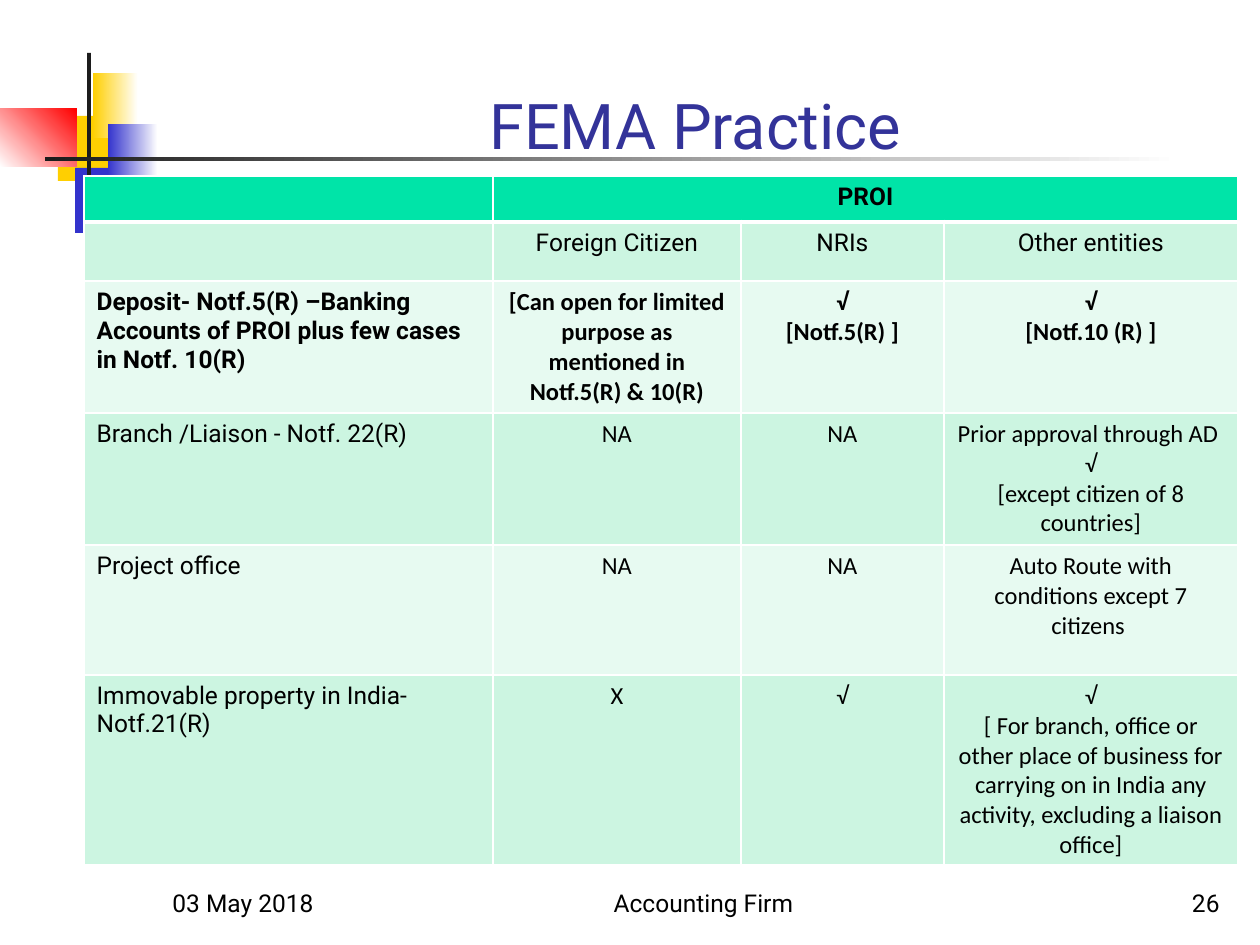
import pptx
import pptx.util
import pptx.dml.color
import pptx.enum.shapes
import pptx.enum.text
import pptx.oxml.ns
from lxml import etree

# Content
TITLE = "FEMA Practice"
HEADER = ["", "PROI"]
SUBHEADER = ["", "Foreign Citizen", "NRIs", "Other entities"]
BODY = [
    ["Deposit- Notf.5(R) –Banking Accounts of PROI plus few cases in Notf. 10(R)",
     "[Can open for limited purpose as mentioned in Notf.5(R) & 10(R)",
     "√\n[Notf.5(R) ]", "√\n[Notf.10 (R) ]"],
    ["Branch /Liaison - Notf. 22(R)", "NA", "NA",
     "Prior approval through AD \n√\n[except citizen of 8 countries]"],
    ["Project office", "NA", "NA", "Auto Route with\nconditions except 7 citizens "],
    ["Immovable property in India- Notf.21(R)", "X", "√",
     "√\n[ For branch, office or other place of business for carrying on in India "
     "any activity, excluding a liaison office]"],
]
BOLD_ROWS = (0, 2)

THEME = dict(
    title="333399", text="000000", white="FFFFFF", dark="1C1C1C",
    yellow="FFCF01", blue="3333CC", red="FF0000",
    header="00E4A8", band=("E7FAF1", "CCF5E1"),
    font="Roboto", cell_font="Calibri", title_size=36, size=14,
)

# Geometry in px, 126 to the inch
SCALE = 914400 // 126
TABLE_AT = (84, 176)
COLS = [409, 248, 203, 294]
ROWS = [46, 59, 132, 132, 130, 190]
FOOTER_Y, FOOTER_H = 861, 63
FOOTER = [("03 May 2018", 160, 262, "LEFT"),
          ("Accounting Firm", 504, 399, "CENTER"),
          ("26", 970, 262, "RIGHT")]
# Left, top, width, height, colours (two make a gradient), angle
ORNAMENT = [
    (58, 116, 60, 65, ["yellow"], 0),
    (75, 168, 58, 65, ["blue"], 0),
    (93, 73, 45, 65, ["yellow", "white"], 0),
    (108, 124, 50, 65, ["blue", "white"], 0),
    (0, 109, 77, 58, ["white", "red"], 45),
    (87, 53, 4, 145, ["dark"], 0),
    (45, 157, 1134, 4, ["dark", "white"], 0),
]


def px(n):
    return pptx.util.Emu(n * SCALE)


def rgb(value):
    return pptx.dml.color.RGBColor.from_string(value)


def write(tf, text, font=THEME["font"], size=THEME["size"], color=THEME["text"],
          bold=False, align="LEFT"):
    for i, line in enumerate(text.split("\n")):
        p = tf.add_paragraph() if i else tf.paragraphs[0]
        p.alignment = getattr(pptx.enum.text.PP_ALIGN, align)
        if not line:
            p._p.get_or_add_endParaRPr().set("sz", str(size * 100))
            continue
        r = p.add_run()
        r.text = line
        r.font.name, r.font.size = font, pptx.util.Pt(size)
        r.font.bold = bold
        r.font.color.rgb = rgb(color)


def add_text(s, text, box, **fmt):
    tf = s.shapes.add_textbox(*map(px, box)).text_frame
    tf.word_wrap = True
    tf.vertical_anchor = pptx.enum.text.MSO_ANCHOR.BOTTOM
    write(tf, text, **fmt)


def add_block(s, box, colors, angle):
    sp = s.shapes.add_shape(pptx.enum.shapes.MSO_SHAPE.RECTANGLE, *map(px, box))
    sp.shadow.inherit = False
    sp.line.fill.background()
    if len(colors) == 1:
        sp.fill.solid()
        sp.fill.fore_color.rgb = rgb(THEME[colors[0]])
        return
    sp.fill.gradient()
    sp.fill.gradient_angle = angle
    for stop, name, position in zip(sp.fill.gradient_stops, colors, (0, 1)):
        stop.color.rgb = rgb(THEME[name])
        stop.position = position


def set_borders(cell, bottom):
    tcPr = cell._tc.get_or_add_tcPr()
    qn = pptx.oxml.ns.qn
    for i, side in enumerate(("lnL", "lnR", "lnT", "lnB")):
        width = bottom if side == "lnB" else 1
        ln = etree.Element(qn("a:" + side), w=str(pptx.util.Pt(width)))
        fill = etree.SubElement(ln, qn("a:solidFill"))
        etree.SubElement(fill, qn("a:srgbClr"), val=THEME["white"])
        tcPr.insert(i, ln)


def add_grid(s):
    rows = [HEADER + [""] * (len(COLS) - len(HEADER)), SUBHEADER] + BODY
    frame = s.shapes.add_table(len(ROWS), len(COLS), *map(px, TABLE_AT),
                               px(sum(COLS)), px(sum(ROWS)))
    table = frame.table
    for col, width in zip(table.columns, COLS):
        col.width = px(width)
    for row, height in zip(table.rows, ROWS):
        row.height = px(height)
    for y, row in enumerate(rows):
        for x, text in enumerate(row):
            cell = table.cell(y, x)
            cell.fill.solid()
            cell.fill.fore_color.rgb = rgb(THEME["band"][y % 2] if y else THEME["header"])
            set_borders(cell, 1 if y else 3)
            write(cell.text_frame, text, bold=y in BOLD_ROWS,
                  font=THEME["cell_font"] if x and y > 1 else THEME["font"],
                  align="CENTER" if x else "LEFT")
    table.cell(0, 1).merge(table.cell(0, len(COLS) - 1))


def main():
    prs = pptx.Presentation()
    prs.slide_width, prs.slide_height = px(1260), px(945)
    s = prs.slides.add_slide(prs.slide_layouts[6])

    # Corner ornament
    for *box, colors, angle in ORNAMENT:
        add_block(s, box, colors, angle)

    # Footer and title
    for text, x, width, align in FOOTER:
        add_text(s, text, (x, FOOTER_Y, width, FOOTER_H), align=align)
    add_text(s, TITLE, (159, 29, 1073, 139), size=THEME["title_size"],
             color=THEME["title"], align="CENTER")

    # Table
    add_grid(s)
    prs.save("out.pptx")


if __name__ == "__main__":
    main()
